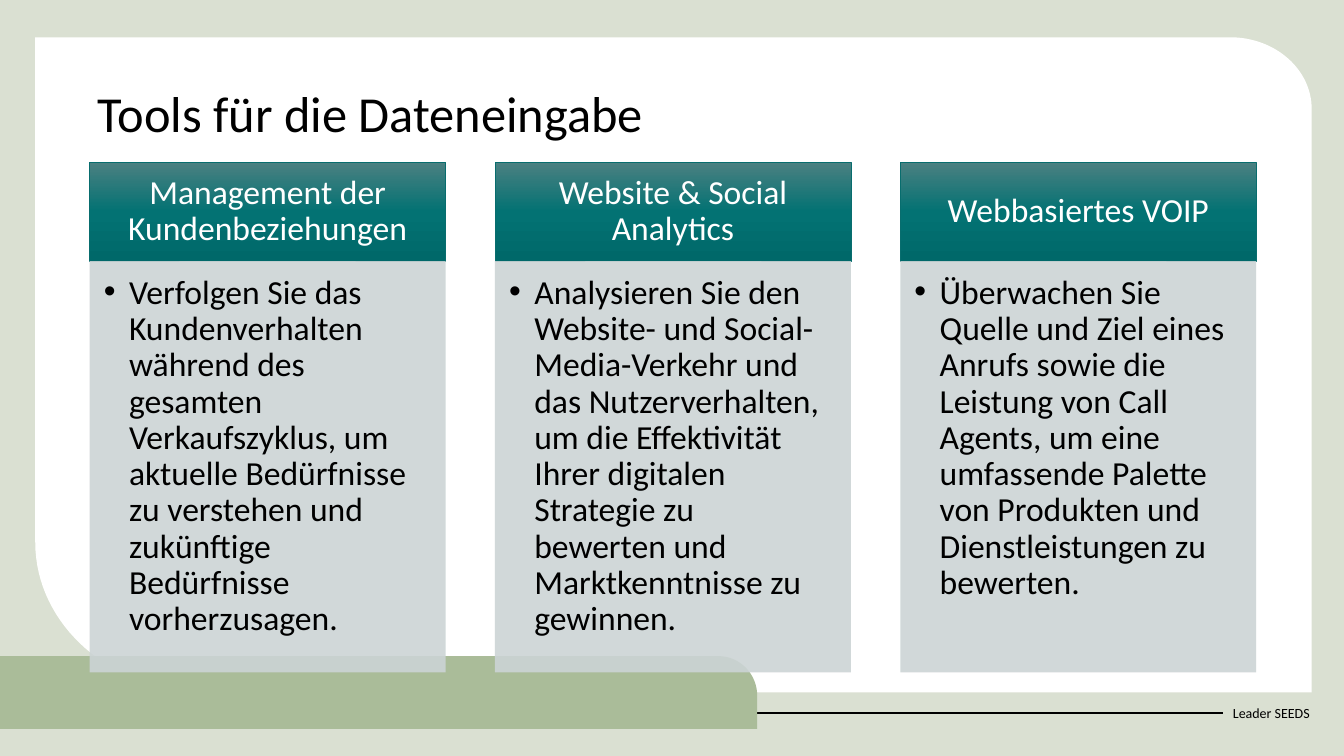
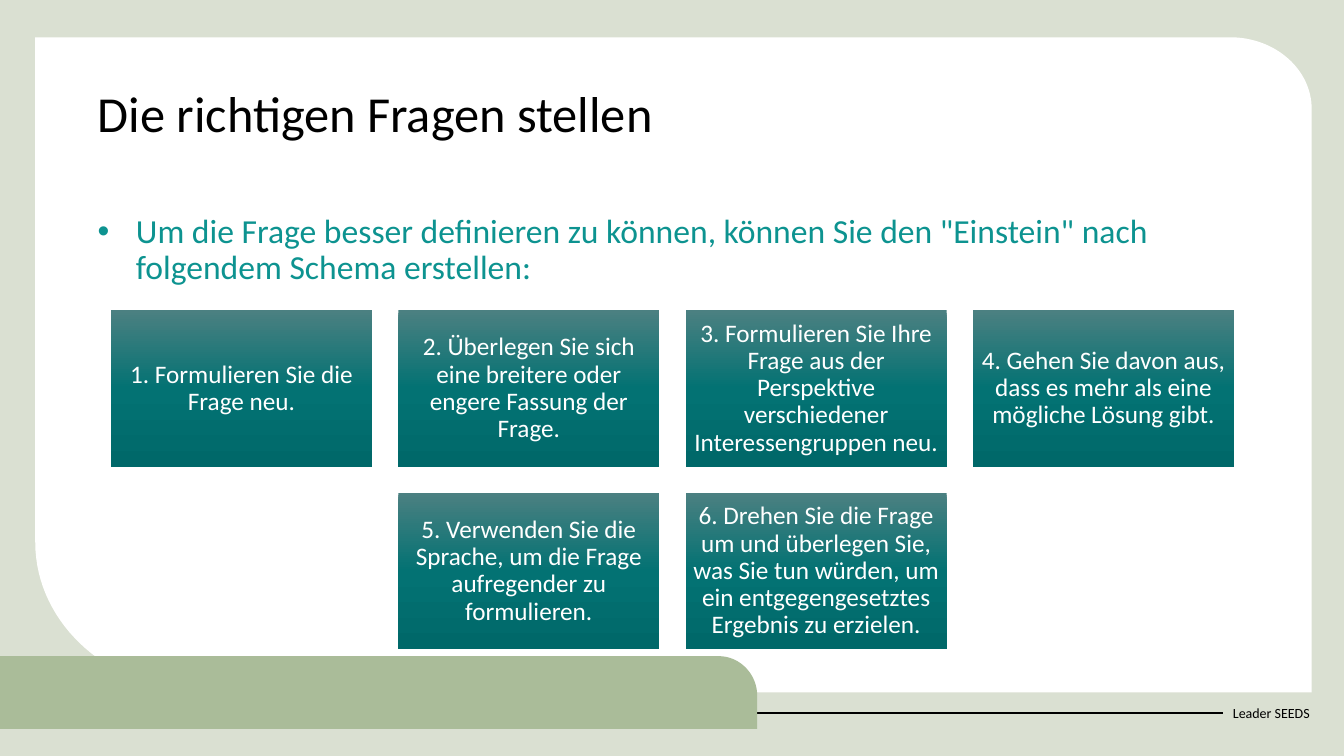
from dataclasses import dataclass

import pptx
import pptx.dml.color
import pptx.enum.shapes
import pptx.enum.text
import pptx.oxml.ns
import pptx.oxml.xmlchemy
import pptx.util
from lxml import etree
from copy import deepcopy

EMU_PER_PX = 9144  # 100 px to the inch
SLIDE_WIDTH, SLIDE_HEIGHT = 1333, 750
CENTER_X = 667
FONT = "Calibri"

BLACK, WHITE = "000000", "FFFFFF"
SAGE_LIGHT, SAGE = "DAE0D2", "AABC99"
TEAL_TEXT, TEAL_EDGE = "0D9390", "086D6E"
TEAL_GRADIENT = ("4B8081", "037273", "006869")
GREY_PANEL = "CCD4D5"

ALIGN = pptx.enum.text.PP_ALIGN
ANCHOR = pptx.enum.text.MSO_ANCHOR
qn = pptx.oxml.ns.qn

Point = tuple[float, float]


@dataclass(frozen=True)
class Box:
    left: int
    top: int
    width: int
    height: int

    def emu(self) -> list[pptx.util.Emu]:
        return [px(v) for v in (self.left, self.top, self.width, self.height)]


@dataclass(frozen=True)
class Tool:
    heading: str
    description: str


TOOLS = [
    Tool("Management der Kundenbeziehungen",
         "Verfolgen Sie das Kundenverhalten während des gesamten Verkaufszyklus, "
         "um aktuelle Bedürfnisse zu verstehen und zukünftige Bedürfnisse vorherzusagen."),
    Tool("Website & Social Analytics",
         "Analysieren Sie den Website- und Social-Media-Verkehr und das Nutzerverhalten, "
         "um die Effektivität Ihrer digitalen Strategie zu bewerten und "
         "Marktkenntnisse zu gewinnen."),
    Tool("Webbasiertes VOIP",
         "Überwachen Sie Quelle und Ziel eines Anrufs sowie die Leistung von Call Agents, "
         "um eine umfassende Palette von Produkten und Dienstleistungen zu bewerten."),
]

QUESTION_ROWS = [
    ["1. Formulieren Sie die Frage neu.",
     "2. Überlegen Sie sich eine breitere oder engere Fassung der Frage.",
     "3. Formulieren Sie Ihre Frage aus der Perspektive verschiedener "
     "Interessengruppen neu.",
     "4. Gehen Sie davon aus, dass es mehr als eine mögliche Lösung gibt."],
    ["5. Verwenden Sie die Sprache, um die Frage aufregender zu formulieren.",
     "6. Drehen Sie die Frage um und überlegen Sie, was Sie tun würden, um ein "
     "entgegengesetztes Ergebnis zu erzielen."],
]


def px(value: float) -> pptx.util.Emu:
    return pptx.util.Emu(round(value * EMU_PER_PX))


def color(value: str) -> pptx.dml.color.RGBColor:
    return pptx.dml.color.RGBColor.from_string(value)


def write(shape, text: str, *, size: int, ink: str = BLACK, align=ALIGN.LEFT,
          anchor=ANCHOR.TOP, insets: tuple[int, int, int, int] = (10, 5, 10, 5),
          line_spacing: float = 0.9, bullet_indent: int = 0) -> None:
    """Fill a shape with one paragraph; insets run left, top, right, bottom."""
    frame = shape.text_frame
    frame.word_wrap = True
    frame.vertical_anchor = anchor
    (frame.margin_left, frame.margin_top,
     frame.margin_right, frame.margin_bottom) = map(px, insets)
    paragraph = frame.paragraphs[0]
    paragraph.alignment = align
    paragraph.line_spacing = line_spacing
    if bullet_indent:
        properties = paragraph._p.get_or_add_pPr()
        properties.set("marL", str(px(bullet_indent)))
        properties.set("indent", str(-px(bullet_indent)))
        etree.SubElement(properties, qn("a:buFont")).set("typeface", "Arial")
        etree.SubElement(properties, qn("a:buChar")).set("char", "•")
    run = paragraph.add_run()
    run.text = text
    run.font.name = FONT
    run.font.size = pptx.util.Pt(size)
    run.font.color.rgb = color(ink)


def add_text(slide, box: Box, text: str, **text_format) -> None:
    write(slide.shapes.add_textbox(*box.emu()), text, **text_format)


def add_rectangle(slide, box: Box):
    shape = slide.shapes.add_shape(
        pptx.enum.shapes.MSO_SHAPE.RECTANGLE, *box.emu())
    shape.shadow.inherit = False
    shape.line.fill.background()
    return shape


def add_teal_card(slide, box: Box, text: str, *, size: int,
                  insets: tuple[int, int, int, int], edge: str | None = None) -> None:
    card = add_rectangle(slide, box)
    card.fill.gradient()
    card.fill.gradient_angle = 270
    stop_list = card._element.spPr.find(qn("a:gradFill")).find(qn("a:gsLst"))
    stop_list.insert(1, deepcopy(stop_list[0]))
    for index, (stop, shade) in enumerate(zip(card.fill.gradient_stops, TEAL_GRADIENT)):
        stop.position = index / 2
        stop.color.rgb = color(shade)
    if edge:
        card.line.color.rgb = color(edge)
        card.line.width = pptx.util.Pt(0.5)
    write(card, text, size=size, ink=WHITE, align=ALIGN.CENTER,
          anchor=ANCHOR.MIDDLE, insets=insets)


def add_grey_panel(slide, box: Box, text: str) -> None:
    panel = add_rectangle(slide, box)
    panel.fill.solid()
    panel.fill.fore_color.rgb = color(GREY_PANEL)
    shade = panel._element.spPr.find(qn("a:solidFill"))[0]
    etree.SubElement(shade, qn("a:alpha")).set("val", "90000")
    write(panel, text, size=24, insets=(14, 14, 19, 21), bullet_indent=25)


def curve(start: Point, control_1: Point, control_2: Point, end: Point,
          steps: int = 32) -> list[Point]:
    """Points along a cubic Bézier curve, both ends included."""
    points = []
    for step in range(steps + 1):
        t = step / steps
        weights = ((1 - t) ** 3, 3 * t * (1 - t) ** 2, 3 * t * t * (1 - t), t ** 3)
        corners = (start, control_1, control_2, end)
        points.append((sum(w * c[0] for w, c in zip(weights, corners)),
                       sum(w * c[1] for w, c in zip(weights, corners))))
    return points


def add_outline(slide, points: list[Point], fill: str) -> None:
    emu_points = [(px(x), px(y)) for x, y in points]
    builder = slide.shapes.build_freeform(*emu_points[0])
    builder.add_line_segments(emu_points[1:], close=True)
    shape = builder.convert_to_shape()
    shape.shadow.inherit = False
    shape.fill.solid()
    shape.fill.fore_color.rgb = color(fill)
    shape.line.fill.background()


def add_base_slide(presentation, title: str):
    """Add a slide with the shared background, bands, footer and title."""
    slide = presentation.slides.add_slide(presentation.slide_layouts[6])
    slide.background.fill.solid()
    slide.background.fill.fore_color.rgb = color(SAGE_LIGHT)
    add_outline(slide, [
        (35, 37),
        *curve((1220, 37), (1265, 37), (1301, 69), (1301, 108)),
        (1301, 687),
        *curve((205, 687), (111, 687), (35, 620), (35, 538)),
    ], WHITE)
    add_text(slide, Box(1213, 687, 101, 40), "Leader SEEDS", size=10,
             anchor=ANCHOR.MIDDLE, line_spacing=1.0)
    rule = slide.shapes.add_connector(
        pptx.enum.shapes.MSO_CONNECTOR.STRAIGHT, px(0), px(707), px(1213), px(707))
    rule.line.color.rgb = color(BLACK)
    rule.line.width = pptx.util.Pt(1.5)
    etree.SubElement(rule._element.spPr, qn("a:effectLst"))
    add_outline(slide, [
        (0, 723), (0, 651),
        *curve((713, 651), (734, 651), (751, 669), (751, 690)),
        (751, 723),
    ], SAGE)
    add_text(slide, Box(87, 83, 1159, 88), title, size=36)
    return slide


def centered_row(count: int, top: int, width: int, height: int, gap: int) -> list[Box]:
    left = CENTER_X - (count * width + (count - 1) * gap) // 2
    return [Box(left + index * (width + gap), top, width, height)
            for index in range(count)]


def build_tools_slide(presentation) -> None:
    slide = add_base_slide(presentation, "Tools für die Dateneingabe")
    for tool, box in zip(TOOLS, centered_row(len(TOOLS), 161, 353, 98, 49)):
        add_teal_card(slide, box, tool.heading, size=24,
                      insets=(19, 11, 19, 11), edge=TEAL_EDGE)
        add_grey_panel(slide, Box(box.left, box.top + box.height, box.width, 408),
                       tool.description)


def build_questions_slide(presentation) -> None:
    slide = add_base_slide(presentation, "Die richtigen Fragen stellen")
    add_text(slide, Box(87, 208, 1159, 90),
             'Um die Frage besser definieren zu können, können Sie den "Einstein" '
             "nach folgendem Schema erstellen:",
             size=24, ink=TEAL_TEXT, bullet_indent=38)
    width, height, gap = 259, 155, 26
    for row, questions in enumerate(QUESTION_ROWS):
        top = 308 + row * (height + gap)
        boxes = centered_row(len(questions), top, width, height, gap)
        for question, box in zip(questions, boxes):
            add_teal_card(slide, box, question, size=18, insets=(7, 7, 7, 7))


def main() -> None:
    presentation = pptx.Presentation()
    presentation.slide_width = px(SLIDE_WIDTH)
    presentation.slide_height = px(SLIDE_HEIGHT)
    build_tools_slide(presentation)
    build_questions_slide(presentation)
    presentation.save("out.pptx")


if __name__ == "__main__":
    main()
